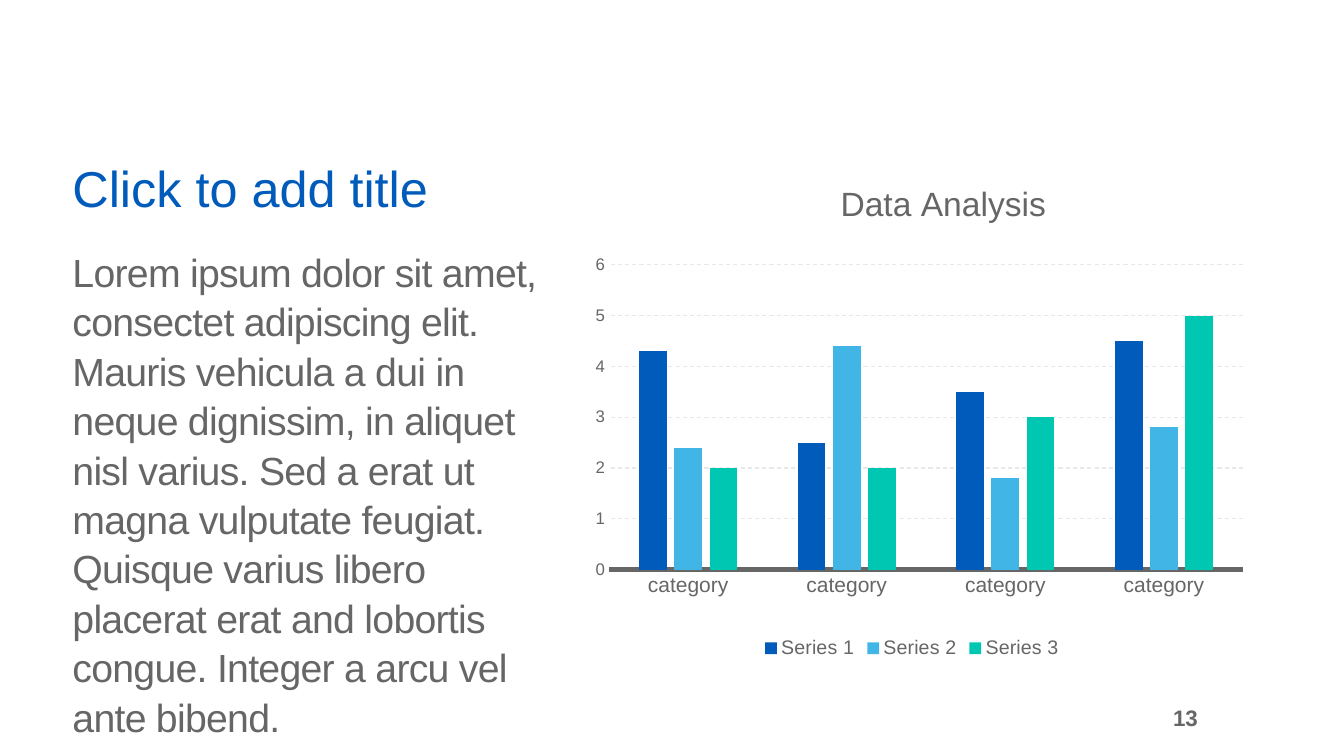
from dataclasses import dataclass

import pptx
import pptx.chart.data
import pptx.dml.color
import pptx.enum.chart
import pptx.enum.dml
import pptx.enum.text
import pptx.oxml
import pptx.oxml.ns
import pptx.util
from pptx.util import Inches

ANCHOR = pptx.enum.text.MSO_ANCHOR
ALIGN = pptx.enum.text.PP_ALIGN


@dataclass(frozen=True)
class Theme:
    font: str = "Arial"
    blue: str = "005BBB"
    sky: str = "41B6E6"
    teal: str = "00C7B1"
    gray: str = "666666"
    grid: str = "E8E8E8"
    title: int = 36
    body: int = 28
    chart_title: int = 24
    page_number: int = 16
    category: int = 15
    legend: int = 14
    value: int = 12
    chart: int = 10


class SlideBuilder:
    def __init__(self, page, theme):
        self.page = page
        self.theme = theme

    def style(self, font, size, color, bold=False):
        font.name = self.theme.font
        font.size = pptx.util.Pt(size)
        font.bold = bold
        font.color.rgb = pptx.dml.color.RGBColor.from_string(color)

    def text(self, words, at, size, color, anchor=ANCHOR.TOP, align=ALIGN.LEFT,
             bold=False, line_spacing=1.0, tracking=0, insets=(0.1, 0.05)):
        box = self.page.shapes.add_textbox(*map(Inches, at))
        frame = box.text_frame
        frame.word_wrap = True
        frame.vertical_anchor = anchor
        frame.margin_left = frame.margin_right = Inches(insets[0])
        frame.margin_top = frame.margin_bottom = Inches(insets[1])
        para = frame.paragraphs[0]
        para.alignment = align
        para.line_spacing = line_spacing
        span = para.add_run()
        span.text = words
        self.style(span.font, size, color, bold)
        if tracking:
            span._r.get_or_add_rPr().set("spc", str(round(tracking * 100)))

    def place(self, parent, index, target=None, **fractions):
        tag = pptx.oxml.ns.qn("c:layout")
        for old in parent.findall(tag):
            parent.remove(old)
        settings = {"xMode": "edge", "yMode": "edge", **fractions}
        if target:
            settings = {"layoutTarget": target, **settings}
        parts = "".join(f'<c:{name} val="{value}"/>' for name, value in settings.items())
        parent.insert(index, pptx.oxml.parse_xml(
            f'<c:layout {pptx.oxml.ns.nsdecls("c")}>'
            f"<c:manualLayout>{parts}</c:manualLayout></c:layout>"))

    def column_chart(self, title, categories, series, at):
        theme = self.theme
        color = pptx.dml.color.RGBColor.from_string
        data = pptx.chart.data.CategoryChartData()
        data.categories = categories
        for name, values, _ in series:
            data.add_series(name, values)
        chart = self.page.shapes.add_chart(
            pptx.enum.chart.XL_CHART_TYPE.COLUMN_CLUSTERED, *map(Inches, at), data).chart
        self.style(chart.font, theme.chart, theme.gray)

        chart.has_title = True
        span = chart.chart_title.text_frame.paragraphs[0].add_run()
        span.text = title
        self.style(span.font, theme.chart_title, theme.gray)
        self.place(chart.chart_title._element, 1, x=0.39, y=0.01)

        chart.has_legend = True
        chart.legend.position = pptx.enum.chart.XL_LEGEND_POSITION.BOTTOM
        chart.legend.include_in_layout = False
        self.style(chart.legend.font, theme.legend, theme.gray)

        plot = chart.plots[0]
        plot.vary_by_categories = False
        plot.gap_width = 219
        plot.overlap = -27
        for column, (_, _, fill) in zip(plot.series, series):
            column.format.fill.solid()
            column.format.fill.fore_color.rgb = color(fill)
        self.place(chart._chartSpace.chart.plotArea, 0, "inner",
                   x=0.07, y=0.19, w=0.9, h=0.62)

        for axis, size in ((chart.category_axis, theme.category),
                           (chart.value_axis, theme.value)):
            axis.major_tick_mark = pptx.enum.chart.XL_TICK_MARK.NONE
            axis.minor_tick_mark = pptx.enum.chart.XL_TICK_MARK.NONE
            self.style(axis.tick_labels.font, size, theme.gray)
        axis_line = chart.category_axis.format.line
        axis_line.color.rgb = color(theme.gray)
        axis_line.width = pptx.util.Pt(3.25)

        values = chart.value_axis
        values.minimum_scale, values.maximum_scale, values.major_unit = 0, 6, 1
        values.format.line.fill.background()
        values.has_major_gridlines = True
        grid = values.major_gridlines.format.line
        grid.color.rgb = color(theme.grid)
        grid.width = pptx.util.Pt(0.75)
        grid.dash_style = pptx.enum.dml.MSO_LINE.DASH


def main():
    deck = pptx.Presentation()
    deck.slide_width = Inches(13.33)
    deck.slide_height = Inches(7.5)
    theme = Theme()
    builder = SlideBuilder(deck.slides.add_slide(deck.slide_layouts[6]), theme)

    builder.text("13", (11.22, 6.83, 0.79, 0.58), theme.page_number, theme.gray,
                 anchor=ANCHOR.MIDDLE, align=ALIGN.RIGHT, bold=True, insets=(0.13, 0.07))
    builder.column_chart(
        "Data Analysis",
        ["category"] * 4,
        [("Series 1", (4.3, 2.5, 3.5, 4.5), theme.blue),
         ("Series 2", (2.4, 4.4, 1.8, 2.8), theme.sky),
         ("Series 3", (2, 2, 3, 5), theme.teal)],
        (5.55, 1.7, 6.99, 4.88))
    builder.text(
        "Lorem ipsum dolor sit amet, consectet adipiscing elit. Mauris vehicula a dui in "
        "neque dignissim, in aliquet nisl varius. Sed a erat ut magna vulputate feugiat. "
        "Quisque varius libero placerat erat and lobortis congue. Integer a arcu vel "
        "ante bibend.",
        (0.62, 2.39, 4.95, 4.79), theme.body, theme.gray, line_spacing=1.05, tracking=-0.5)
    builder.text("Click to add title", (0.62, 1.44, 4.67, 0.78), theme.title, theme.blue,
                 anchor=ANCHOR.BOTTOM, line_spacing=0.9)
    deck.save("out.pptx")


if __name__ == "__main__":
    main()
